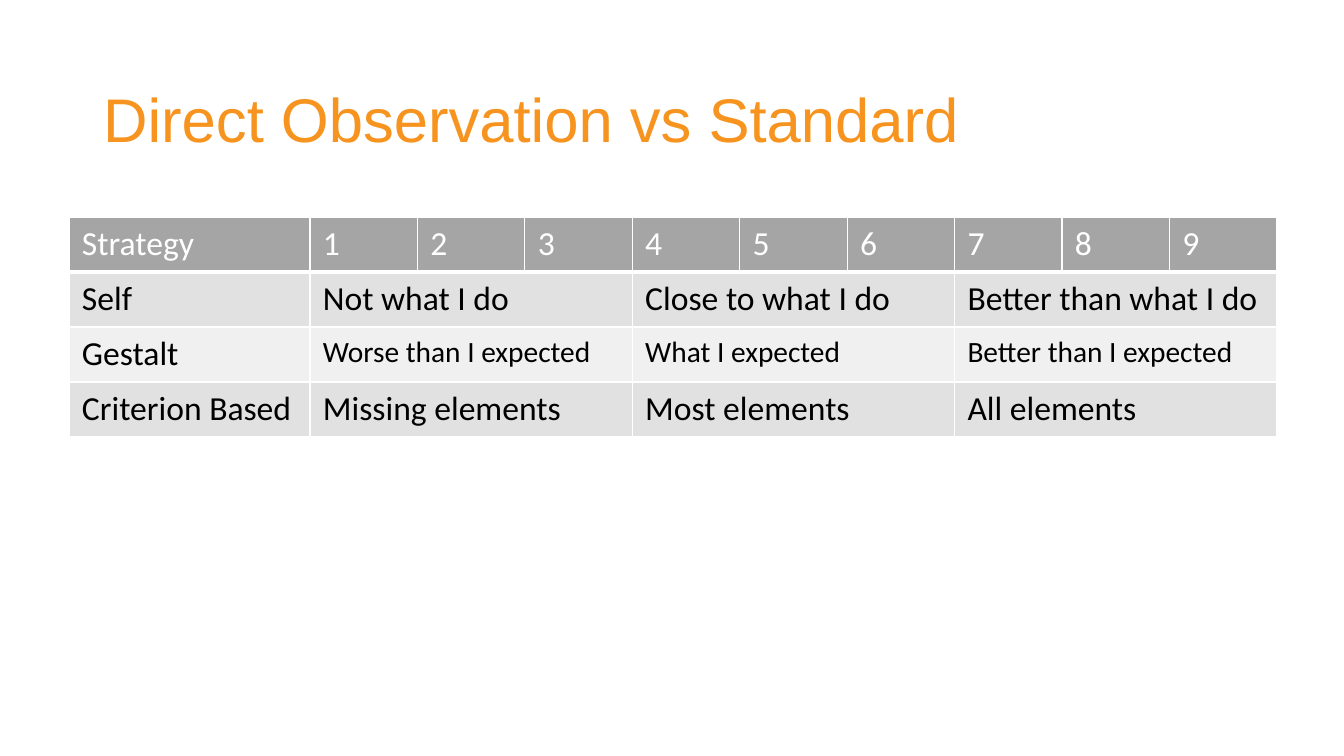
from lxml import etree
from pptx import Presentation
from pptx.dml.color import RGBColor
from pptx.enum.text import MSO_ANCHOR, PP_ALIGN
from pptx.oxml.ns import qn
from pptx.util import Pt

LEFT = PP_ALIGN.LEFT
TOP = MSO_ANCHOR.TOP
MIDDLE = MSO_ANCHOR.MIDDLE
EMU_PER_PX = 914400 / 100.8
TITLE_ONLY = 5

COLORS = {
    "title": "F6941F",
    "header": "A5A5A5",
    "band_dark": "E1E1E1",
    "band_light": "F0F0F0",
    "white": "FFFFFF",
    "black": "000000",
}

SCORES = 9
SPAN = 3
STRATEGIES = [
    ("Self", 24, ["Not what I do", "Close to what I do", "Better than what I do"]),
    ("Gestalt", 21, ["Worse than I expected", "What I expected", "Better than I expected"]),
    ("Criterion Based", 24, ["Missing elements", "Most elements", "All elements"]),
]


def px(n):
    return round(n * EMU_PER_PX)


class SlideBuilder:
    title_font = {"name": "Arial", "size": Pt(44), "bold": False}
    cell_font = {"name": "Calibri", "bold": False}
    cell_format = {
        "margin_left": px(13),
        "margin_right": px(13),
        "margin_top": px(7),
        "margin_bottom": px(7),
        "vertical_anchor": TOP,
    }

    def __init__(self, prs):
        self.s = prs.slides.add_slide(prs.slide_layouts[TITLE_ONLY])

    def apply(self, target, values):
        for name, value in values.items():
            setattr(target, name, value)

    def add_text(self, tf, text, font, color):
        p = tf.paragraphs[0]
        p.alignment = LEFT
        r = p.add_run()
        r.text = text
        self.apply(r.font, font)
        r.font.color.rgb = RGBColor.from_string(COLORS[color])
        return p

    def title(self, text, x, y, w, h):
        sp = self.s.shapes.title
        self.apply(sp, {"left": px(x), "top": px(y), "width": px(w), "height": px(h)})
        tf = sp.text_frame
        self.apply(tf, {"word_wrap": True, "vertical_anchor": MIDDLE})
        self.add_text(tf, text, self.title_font, "title").line_spacing = 0.9

    def table(self, rows, cols, x, y, w, h, first_width):
        table = self.s.shapes.add_table(rows, cols, px(x), px(y), px(w), px(h)).table
        for i, column in enumerate(table.columns):
            column.width = px((w - first_width) / (cols - 1) if i else first_width)
        return table

    def borders(self, cell, bottom):
        tc_pr = cell._tc.get_or_add_tcPr()
        widths = {"a:lnL": 1, "a:lnR": 1, "a:lnT": 1, "a:lnB": bottom}
        for i, (tag, width) in enumerate(widths.items()):
            ln = etree.Element(qn(tag), w=str(Pt(width)))
            fill = etree.SubElement(ln, qn("a:solidFill"))
            etree.SubElement(fill, qn("a:srgbClr"), val=COLORS["white"])
            tc_pr.insert(i, ln)

    def style_cell(self, cell, fill, bottom=1):
        self.apply(cell, self.cell_format)
        cell.fill.solid()
        cell.fill.fore_color.rgb = RGBColor.from_string(COLORS[fill])
        self.borders(cell, bottom)

    def cell_text(self, cell, text, size, color):
        self.add_text(cell.text_frame, text, {**self.cell_font, "size": Pt(size)}, color)


def main():
    prs = Presentation()
    prs.slide_width, prs.slide_height = px(1344), px(756)
    slide = SlideBuilder(prs)
    slide.title("Direct Observation vs Standard", 93, 50, 1159, 146)
    table = slide.table(len(STRATEGIES) + 1, SCORES + 1, 69, 217, 1208, 218, 241)

    header = ["Strategy"] + [str(n + 1) for n in range(SCORES)]
    for col, text in enumerate(header):
        cell = table.cell(0, col)
        slide.style_cell(cell, "header", bottom=3)
        slide.cell_text(cell, text, 24, "white")

    for row, (name, size, ratings) in enumerate(STRATEGIES, 1):
        for col in range(SCORES + 1):
            slide.style_cell(table.cell(row, col), "band_dark" if row % 2 else "band_light")
        slide.cell_text(table.cell(row, 0), name, 24, "black")
        for i, rating in enumerate(ratings):
            col = 1 + i * SPAN
            cell = table.cell(row, col)
            cell.merge(table.cell(row, col + SPAN - 1))
            slide.cell_text(cell, rating, size, "black")

    prs.save("out.pptx")


if __name__ == "__main__":
    main()
